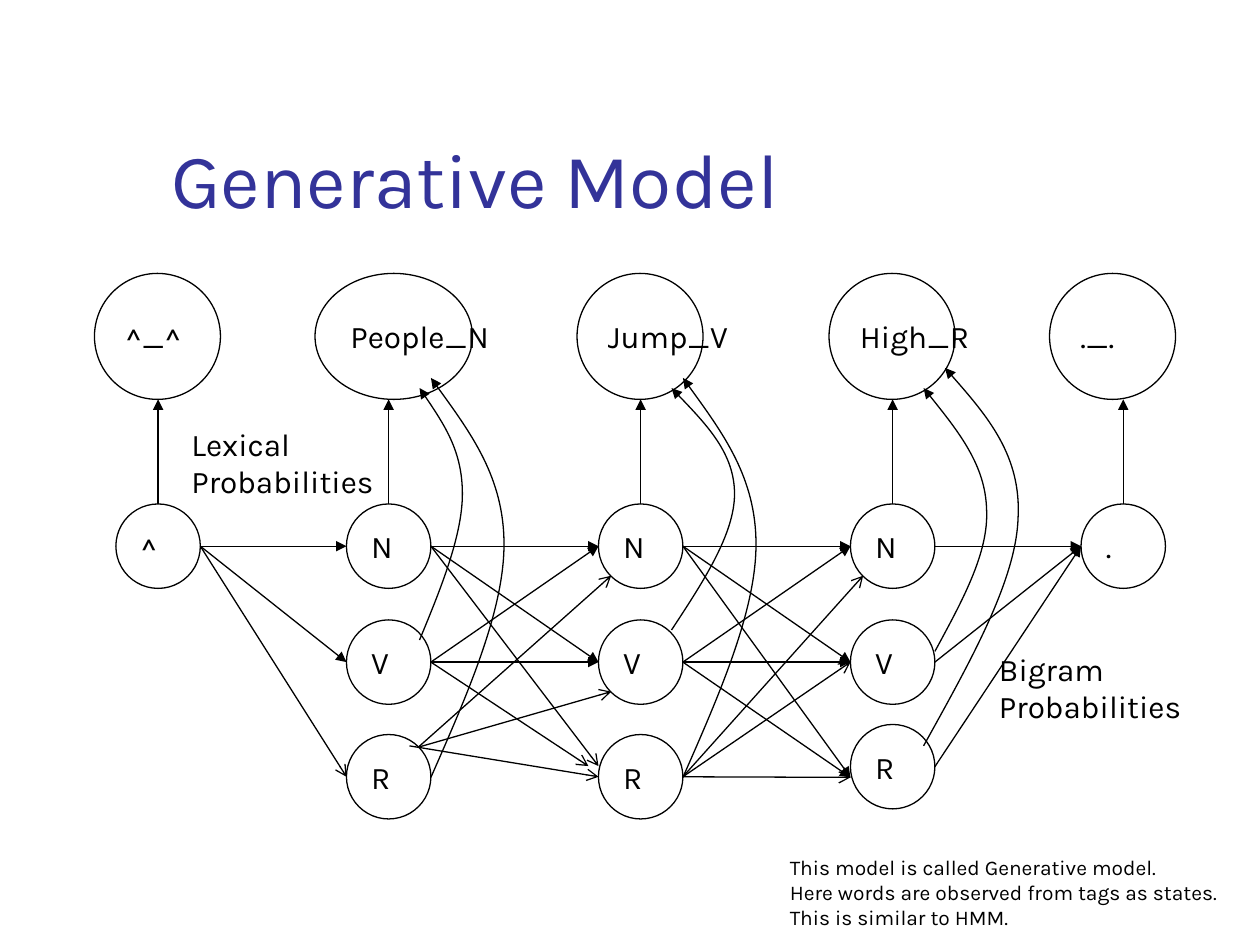
from pptx import Presentation
from pptx.dml.color import RGBColor
from pptx.enum.shapes import MSO_CONNECTOR, MSO_SHAPE
from pptx.enum.text import MSO_ANCHOR, MSO_AUTO_SIZE, PP_ALIGN
from pptx.oxml.ns import qn
from pptx.util import Inches, Pt
from lxml.etree import SubElement

FONT = "Karla"
BLACK, WHITE, TITLE_BLUE = "000000", "FFFFFF", "333399"
STATE_SIZE = 0.67
OBSERVATION_TOP, OBSERVATION_HEIGHT = 2.17, 1

# text, left, width
OBSERVATIONS = [
    ("^_^", 0.75, 1), ("People_N", 2.5, 1.25), ("Jump_V", 4.58, 1),
    ("High_R", 6.58, 1), ("._.", 8.33, 1),
]
# name (tag and word number): left, top
STATES = {
    "^0": (0.92, 4),
    "N1": (2.75, 4), "V1": (2.75, 4.92), "R1": (2.75, 5.83),
    "N2": (4.75, 4), "V2": (4.75, 4.92), "R2": (4.75, 5.83),
    "N3": (6.75, 4), "V3": (6.75, 4.92), "R3": (6.75, 5.75),
    ".4": (8.58, 4),
}
# Position of each port as a fraction of the circle's box
PORTS = {
    "top": (0.5, 0), "left": (0, 0.5), "right": (1, 0.5),
    "upper right": (0.85, 0.15), "lower left": (0.15, 0.85),
}
SOLID_TRANSITIONS = [
    ("^0", "N1"), ("^0", "V1"),
    ("N1", "N2"), ("N1", "V2"), ("V1", "N2"), ("V1", "V2"),
    ("N2", "N3"), ("N2", "V3"), ("V2", "N3"), ("V2", "V3"),
    ("N3", ".4"), ("V3", ".4"), ("R3", ".4"),
]
# Ends are a state with its port, or a point
OTHER_TRANSITIONS = [
    (("N2", "right"), (6.75, 6.17), "triangle"),
    (("V2", "right"), (6.75, 6.17), "triangle"),
    (("N1", "right"), (4.75, 6.08), "arrow"),
    (("V1", "right"), (4.67, 6.08), "arrow"),
    (("R1", "upper right"), ("N2", "lower left"), "arrow"),
    (("R1", "upper right"), ("V2", "lower left"), "arrow"),
    ((3.25, 5.92), ("R2", "left"), "arrow"),
    (("R2", "right"), ("N3", "lower left"), "arrow"),
    (("R2", "right"), (6.75, 6.17), "arrow"),
    (("R2", "right"), ("V3", "left"), "arrow"),
    (("^0", "right"), ("R1", "left"), "arrow"),
]
# Start, then three points for each of two Bézier segments
V1_CURVE = [(3.33, 5.08), (3.5, 4.67), (3.67, 4.25), (3.67, 3.92),
            (3.67, 3.58), (3.5, 3.33), (3.33, 3.08)]
V2_CURVE = [(5.33, 5), (5.58, 4.62), (5.83, 4.24), (5.83, 3.92),
            (5.83, 3.6), (5.58, 3.34), (5.33, 3.08)]
V3_CURVE = [(7.42, 5.17), (7.63, 4.78), (7.85, 4.39), (7.83, 4.04),
            (7.82, 3.69), (7.58, 3.39), (7.33, 3.08)]
R1_CURVE = [(3.42, 6.17), (3.71, 5.51), (4, 4.85), (4, 4.32),
            (4, 3.79), (3.71, 3.4), (3.42, 3)]
R2_CURVE = [(x + 2, y) for x, y in R1_CURVE]
R3_CURVE = [(7.33, 5.92), (7.69, 5.27), (8.06, 4.62), (8.08, 4.12),
            (8.11, 3.62), (7.81, 3.27), (7.5, 2.92)]
LEXICAL_CURVES = [V1_CURVE, V2_CURVE, V3_CURVE, R1_CURVE, R2_CURVE, R3_CURVE]

# lines, box, text size
LABELS = [
    (["Lexical", "Probabilities"], (1.42, 3.42, 1.58, 0.5), 18),
    (["Bigram", "Probabilities"], (7.83, 5.08, 1.42, 0.75), 18),
    (["This model is called Generative model.",
      "Here words are observed from tags as states.",
      "This is similar to HMM."], (6.17, 6.83, 3.5, 0.5), 12),
]


def color(hex_string):
    return RGBColor.from_string(hex_string)


def write(shape, lines, size, hex_string=BLACK, anchor=MSO_ANCHOR.MIDDLE, wrap=False):
    frame = shape.text_frame
    frame.auto_size = MSO_AUTO_SIZE.NONE
    frame.word_wrap = wrap
    frame.vertical_anchor = anchor
    for index, line in enumerate(lines):
        paragraph = frame.add_paragraph() if index else frame.paragraphs[0]
        paragraph.alignment = PP_ALIGN.LEFT
        run = paragraph.add_run()
        run.text = line
        run.font.name = FONT
        run.font.size = Pt(size)
        run.font.color.rgb = color(hex_string)


def add_circle(slide, text, left, top, width, height):
    shape = slide.shapes.add_shape(MSO_SHAPE.OVAL, *map(Inches, (left, top, width, height)))
    shape.shadow.inherit = False
    shape.fill.background()
    draw_line(shape)
    write(shape, [text], 18)


def draw_line(shape, head=None):
    """Give a shape a thin black line, with an arrowhead at its end if one is named."""
    shape.line.color.rgb = color(BLACK)
    shape.line.width = Pt(0.75)
    if head:
        SubElement(shape.line._get_or_add_ln(), qn("a:tailEnd"), type=head)


def locate(end):
    """Return the point of a (state, port) pair; a point stays as it is."""
    if end[0] not in STATES:
        return end
    left, top = STATES[end[0]]
    across, down = PORTS[end[1]]
    return left + across * STATE_SIZE, top + down * STATE_SIZE


def add_arrow(slide, start, end, head="triangle"):
    points = map(Inches, (*locate(start), *locate(end)))
    connector = slide.shapes.add_connector(MSO_CONNECTOR.STRAIGHT, *points)
    draw_line(connector, head)
    SubElement(connector._element.spPr, qn("a:effectLst"))


def add_curve(slide, points):
    """Build an outline through the control points, then turn each three into a Bézier."""
    (start_x, start_y), *controls = [(Inches(x), Inches(y)) for x, y in points]
    builder = slide.shapes.build_freeform(start_x, start_y)
    builder.add_line_segments(controls, close=False)
    shape = builder.convert_to_shape()
    segments = list(shape._element.iter(qn("a:lnTo")))
    outline = segments[0].getparent()
    for first in range(0, len(segments), 3):
        bezier = SubElement(outline, qn("a:cubicBezTo"))
        for segment in segments[first:first + 3]:
            bezier.append(segment[0])
            outline.remove(segment)
    shape.shadow.inherit = False
    shape.fill.background()
    draw_line(shape, "triangle")


def add_label(slide, lines, box, size):
    shape = slide.shapes.add_textbox(*map(Inches, box))
    write(shape, lines, size)


def main():
    presentation = Presentation()
    presentation.slide_width, presentation.slide_height = Inches(10), Inches(7.5)
    slide = presentation.slides.add_slide(presentation.slide_layouts[5])
    slide.background.fill.solid()
    slide.background.fill.fore_color.rgb = color(WHITE)

    title = slide.shapes.title
    title.left, title.top, title.width, title.height = map(Inches, (1.26, 0.23, 8.52, 1.6))
    write(title, ["Generative Model"], 44, TITLE_BLUE, MSO_ANCHOR.BOTTOM, wrap=True)

    for text, left, width in OBSERVATIONS:
        add_circle(slide, text, left, OBSERVATION_TOP, width, OBSERVATION_HEIGHT)
    for name, (left, top) in STATES.items():
        add_circle(slide, name[0], left, top, STATE_SIZE, STATE_SIZE)

    for source, target in SOLID_TRANSITIONS:
        add_arrow(slide, (source, "right"), (target, "left"))
    for start, end, head in OTHER_TRANSITIONS:
        add_arrow(slide, start, end, head)
    for name in ("^0", "N1", "N2", "N3", ".4"):
        x, _ = locate((name, "top"))
        add_arrow(slide, (name, "top"), (x, OBSERVATION_TOP + OBSERVATION_HEIGHT))

    for points in LEXICAL_CURVES:
        add_curve(slide, points)
    for lines, box, size in LABELS:
        add_label(slide, lines, box, size)
    presentation.save("out.pptx")


if __name__ == "__main__":
    main()
